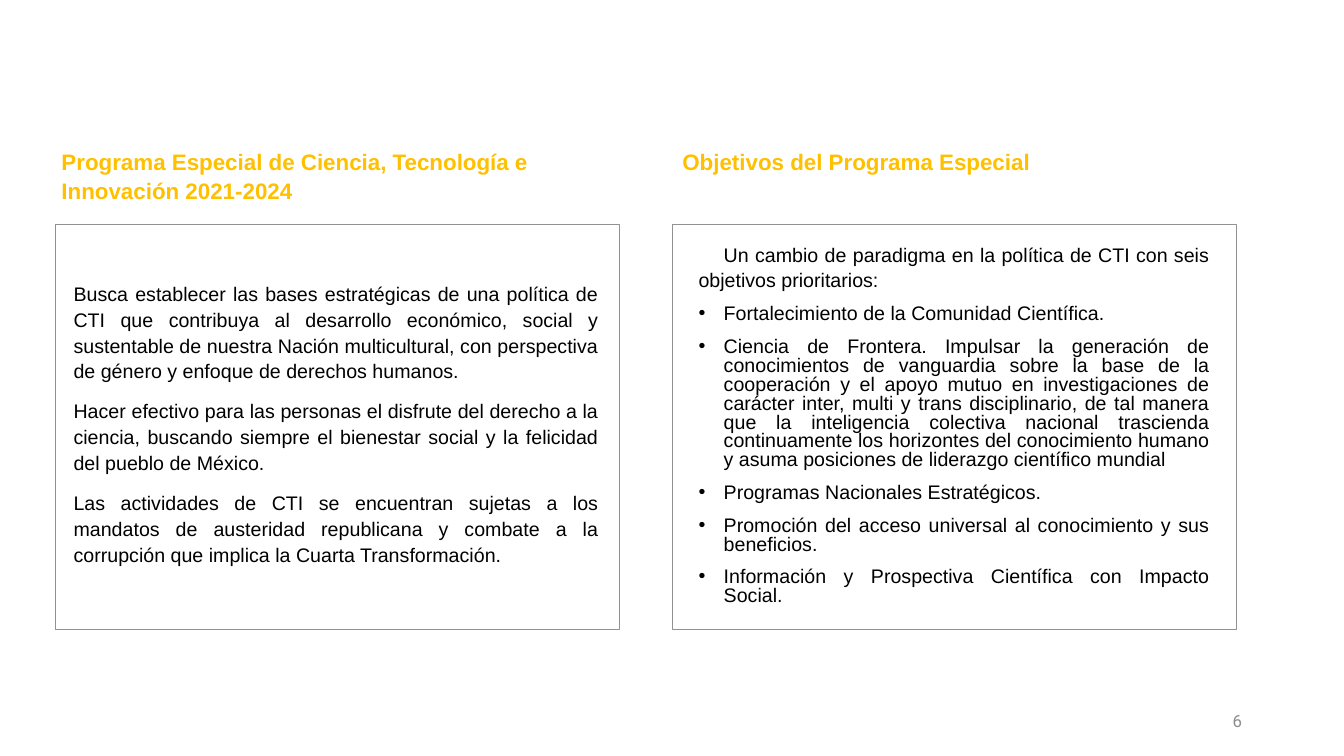
from dataclasses import dataclass

from pptx import Presentation
from pptx.dml.color import RGBColor
from pptx.enum.shapes import MSO_SHAPE
from pptx.enum.text import MSO_ANCHOR, MSO_AUTO_SIZE, PP_ALIGN
from pptx.oxml.ns import qn
from pptx.util import Pt
from lxml.etree import SubElement


@dataclass(frozen=True)
class Theme:
    heading: RGBColor = RGBColor(0xFF, 0xC0, 0x00)
    text: RGBColor = RGBColor(0, 0, 0)
    border: RGBColor = RGBColor(0x92, 0x92, 0x92)
    number: RGBColor = RGBColor(0x8C, 0x8C, 0x8C)
    font: str = "Arial"
    number_font: str = "Roboto"
    heading_size: int = 16
    text_size: int = 14
    number_size: int = 12
    indent: int = 18


THEME = Theme()
PROGRAM = [
    "Busca establecer las bases estratégicas de una política de CTI que contribuya al desarrollo "
    "económico, social y sustentable de nuestra Nación multicultural, con perspectiva de género "
    "y enfoque de derechos humanos.",
    "Hacer efectivo para las personas el disfrute del derecho a la ciencia, buscando siempre "
    "el bienestar social y la felicidad del pueblo de México.",
    "Las actividades de CTI se encuentran sujetas a los mandatos de austeridad republicana "
    "y combate a la corrupción que implica la Cuarta Transformación.",
]
OBJECTIVES_INTRO = "Un cambio de paradigma en la política de CTI con seis objetivos prioritarios:"
OBJECTIVES = [
    "Fortalecimiento de la Comunidad Científica.",
    "Ciencia de Frontera. Impulsar la generación de conocimientos de vanguardia sobre la base de "
    "la cooperación y el apoyo mutuo en investigaciones de carácter inter, multi y trans "
    "disciplinario, de tal manera que la inteligencia colectiva nacional trascienda continuamente "
    "los horizontes del conocimiento humano y asuma posiciones de liderazgo científico mundial",
    "Programas Nacionales Estratégicos.",
    "Promoción del acceso universal al conocimiento y sus beneficios.",
    "Información y Prospectiva Científica con Impacto Social.",
]


def place(sp, left, top, width, height, anchor=MSO_ANCHOR.TOP):
    sp.left, sp.top, sp.width, sp.height = Pt(left), Pt(top), Pt(width), Pt(height)
    tf = sp.text_frame
    tf.word_wrap = True
    tf.auto_size = MSO_AUTO_SIZE.NONE
    tf.vertical_anchor = anchor
    return tf


def add_run(p, text, size, color, font=THEME.font, bold=False):
    r = p.add_run()
    r.text = text
    r.font.name, r.font.size, r.font.bold = font, Pt(size), bold
    r.font.color.rgb = color


def format_paragraph(p, align, line_spacing=1.1, margin=0, indent=0, bullet=False):
    p.alignment = align
    p.line_spacing = line_spacing
    p.space_before, p.space_after = Pt(10), Pt(0)
    pPr = p._p.get_or_add_pPr()
    pPr.set("marL", str(Pt(margin)))
    pPr.set("indent", str(Pt(indent)))
    if bullet:
        SubElement(pPr, qn("a:buFont")).set("typeface", THEME.font)
        SubElement(pPr, qn("a:buChar")).set("char", "•")
    else:
        SubElement(pPr, qn("a:buNone"))


def add_heading(sp, text, left, top, width):
    p = place(sp, left, top, width, 51.84).paragraphs[0]
    format_paragraph(p, PP_ALIGN.LEFT)
    add_run(p, text, THEME.heading_size, THEME.heading, bold=True)


def add_body(sp, items, left, top, width, height):
    tf = place(sp, left, top, width, height)
    for i, (text, style) in enumerate(items):
        p = tf.add_paragraph() if i else tf.paragraphs[0]
        format_paragraph(p, PP_ALIGN.JUSTIFY, **style)
        add_run(p, text, THEME.text_size, THEME.text)


def add_panel(slide, left, top, width, height):
    sp = slide.shapes.add_shape(MSO_SHAPE.RECTANGLE, Pt(left), Pt(top), Pt(width), Pt(height))
    sp.shadow.inherit = False
    sp.fill.background()
    sp.line.color.rgb = THEME.border
    sp.line.width = Pt(0.25)


def add_program(slide, left, top, width, height):
    ph = slide.placeholders
    add_heading(ph[1], "Programa Especial de Ciencia, Tecnología e Innovación 2021-2024",
                left - 2.88, top - 59.76, width - 30)
    add_body(ph[2], [(text, {}) for text in PROGRAM], left + 5.76, top + 36, width - 13, 220)
    add_panel(slide, left, top, width, height)


def add_objectives(slide, left, top, width, height):
    ph = slide.placeholders
    bullet = dict(line_spacing=0.8, margin=THEME.indent, indent=-THEME.indent, bullet=True)
    items = [(OBJECTIVES_INTRO, dict(indent=THEME.indent))]
    items += [(text, bullet) for text in OBJECTIVES]
    add_heading(ph[3], "Objetivos del Programa Especial", left, top - 59.76, width - 70)
    add_body(ph[4], items, left + 11.52, top + 7.92, width - 23, 270)
    add_panel(slide, left, top, width, height)


def add_page_number(slide, left, top, width, height):
    sp = slide.shapes.add_textbox(0, 0, 0, 0)
    p = place(sp, left, top, width, height, MSO_ANCHOR.MIDDLE).paragraphs[0]
    p.alignment = PP_ALIGN.RIGHT
    add_run(p, "6", THEME.number_size, THEME.number, THEME.number_font)


def main():
    prs = Presentation()
    prs.slide_width, prs.slide_height = Pt(960), Pt(540)
    slide = prs.slides.add_slide(prs.slide_layouts[4])
    title = slide.shapes.title._element
    title.getparent().remove(title)
    panel_top, panel_width, panel_height = 160, 402.5, 289.4
    add_program(slide, 39.6, panel_top, panel_width, panel_height)
    add_objectives(slide, 480.24, panel_top, panel_width, panel_height)
    add_page_number(slide, 678.24, 500.4, 216, 28.8)
    prs.save("out.pptx")


if __name__ == "__main__":
    main()
